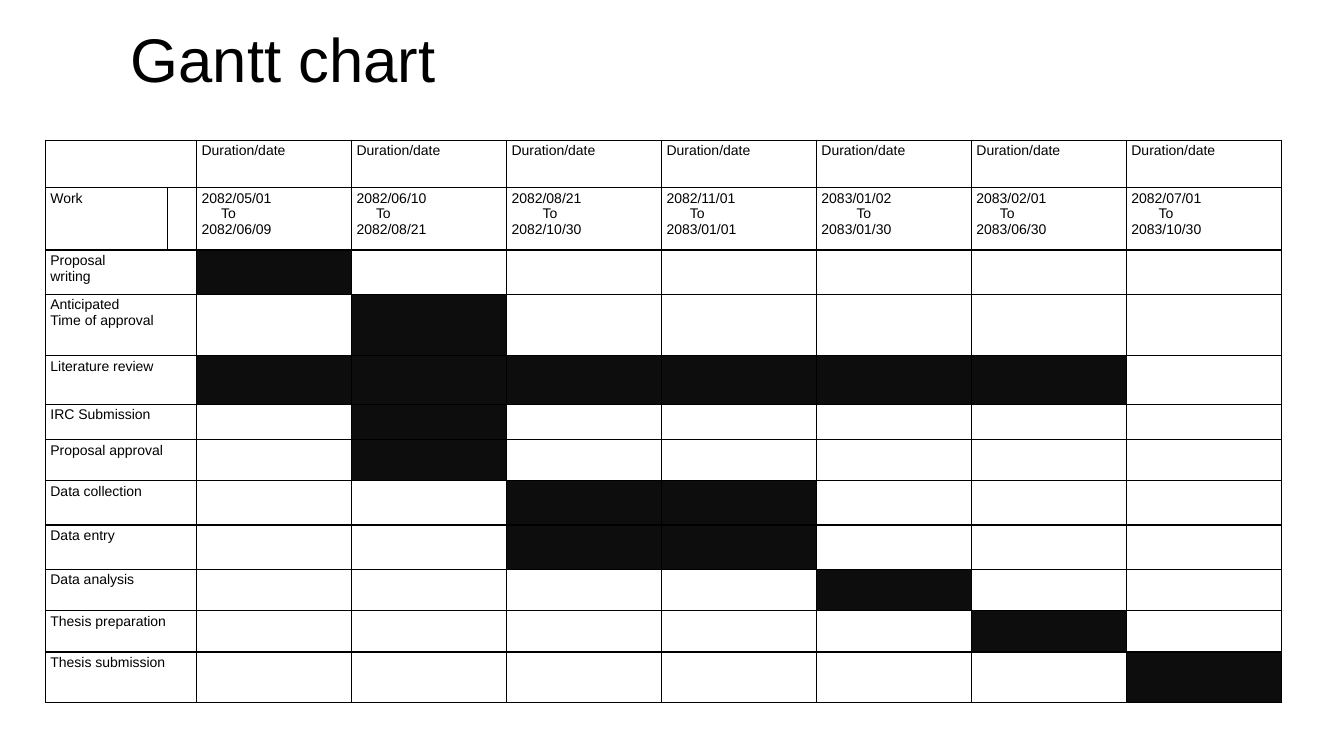
from lxml.etree import SubElement
from pptx import Presentation
from pptx.dml.color import RGBColor
from pptx.enum.text import MSO_ANCHOR
from pptx.oxml.ns import qn
from pptx.util import Inches, Pt

BLACK = RGBColor(0x00, 0x00, 0x00)
WHITE = RGBColor(0xFF, 0xFF, 0xFF)
BAR = RGBColor(0x0D, 0x0D, 0x0D)
FONT = "Arial"
BODY_SIZE = 10
SPACE_WIDTH = 0.0386  # inches, one Arial space at body size

TABLE_WIDTH = 12.26
WORK_WIDTHS = [1.21, 0.29]
ROW_HEIGHTS = [0.47, 0.62, 0.44, 0.61, 0.48, 0.35, 0.41, 0.44, 0.44, 0.41, 0.41, 0.5]

# Start, end, and indent of the word "To" in spaces
PERIODS = [
    ("2082/05/01", "2082/06/09", 5),
    ("2082/06/10", "2082/08/21", 5),
    ("2082/08/21", "2082/10/30", 8),
    ("2082/11/01", "2083/01/01", 6),
    ("2083/01/02", "2083/01/30", 9),
    ("2083/02/01", "2083/06/30", 6),
    ("2082/07/01", "2083/10/30", 7),
]

# Task lines, first and last period that its bar covers
TASKS = [
    (["Proposal", "writing"], 0, 0),
    (["Anticipated", "Time of approval"], 1, 1),
    (["Literature review"], 0, 5),
    (["IRC Submission"], 1, 1),
    (["Proposal approval"], 1, 1),
    (["Data collection"], 2, 3),
    (["Data entry"], 2, 3),
    (["Data analysis"], 4, 4),
    (["Thesis preparation"], 5, 5),
    (["Thesis submission"], 6, 6),
]


def write_text(frame, lines, size=BODY_SIZE, color=BLACK, spacing=None):
    for index, line in enumerate(lines):
        paragraph = frame.paragraphs[0] if index == 0 else frame.add_paragraph()
        paragraph.line_spacing = spacing
        run = paragraph.add_run()
        run.text = line
        run.font.name = FONT
        run.font.size = Pt(size)
        run.font.color.rgb = color


def add_title(slide, title):
    box = slide.shapes.add_textbox(Inches(1.2), Inches(0), Inches(10), Inches(1.25))
    box.text_frame.word_wrap = True
    box.text_frame.vertical_anchor = MSO_ANCHOR.MIDDLE
    write_text(box.text_frame, [title], size=44, spacing=0.9)


def style_cell(cell):
    """Give the cell its margins, 1 pt borders, white fill and empty-line size."""
    cell.margin_left = cell.margin_right = Inches(0.05)
    cell.margin_top = cell.margin_bottom = Inches(0.03)
    properties = cell._tc.get_or_add_tcPr()
    for side in ("a:lnL", "a:lnR", "a:lnT", "a:lnB"):
        border = SubElement(properties, qn(side), w=str(Pt(1)))
        fill = SubElement(border, qn("a:solidFill"))
        SubElement(fill, qn("a:srgbClr"), val=str(BLACK))
    fill_cell(cell, WHITE)
    if not cell.text:
        paragraph = cell.text_frame.paragraphs[0]._p
        SubElement(paragraph, qn("a:endParaRPr"), sz=str(BODY_SIZE * 100))


def fill_cell(cell, color):
    cell.fill.solid()
    cell.fill.fore_color.rgb = color


def write_period(cell, start, end, spaces):
    write_text(cell.text_frame, [start, "To", end])
    to_properties = cell.text_frame.paragraphs[1]._p.get_or_add_pPr()
    to_properties.set("marL", str(Inches(spaces * SPACE_WIDTH)))
    to_properties.set("indent", "0")


def add_grid(slide):
    """Add the empty table with its column widths and row heights."""
    period_width = (TABLE_WIDTH - sum(WORK_WIDTHS)) / len(PERIODS)
    widths = WORK_WIDTHS + [period_width] * len(PERIODS)
    grid = slide.shapes.add_table(
        len(ROW_HEIGHTS), len(widths), Inches(0.45), Inches(1.39),
        Inches(TABLE_WIDTH), Inches(sum(ROW_HEIGHTS))).table
    grid.first_row = grid.horz_banding = False
    for column, width in zip(grid.columns, widths):
        column.width = Inches(width)
    for row, height in zip(grid.rows, ROW_HEIGHTS):
        row.height = Inches(height)
    return grid


def add_gantt(slide):
    grid = add_grid(slide)
    first_period = len(WORK_WIDTHS)
    first_task = len(ROW_HEIGHTS) - len(TASKS)

    write_text(grid.cell(1, 0).text_frame, ["Work"])
    for column, period in enumerate(PERIODS, first_period):
        write_text(grid.cell(0, column).text_frame, ["Duration/date"])
        write_period(grid.cell(1, column), *period)
    for row, (lines, _, _) in enumerate(TASKS, first_task):
        write_text(grid.cell(row, 0).text_frame, lines)

    for cell in grid.iter_cells():
        style_cell(cell)

    for row, (_, first, last) in enumerate(TASKS, first_task):
        for period in range(first, last + 1):
            fill_cell(grid.cell(row, first_period + period), BAR)
    for row in [0, *range(first_task, len(ROW_HEIGHTS))]:
        grid.cell(row, 0).merge(grid.cell(row, 1))


def main():
    deck = Presentation()
    deck.slide_width, deck.slide_height = Inches(13.33), Inches(7.5)
    slide = deck.slides.add_slide(deck.slide_layouts[6])
    add_title(slide, "Gantt chart")
    add_gantt(slide)
    deck.save("out.pptx")


if __name__ == "__main__":
    main()
